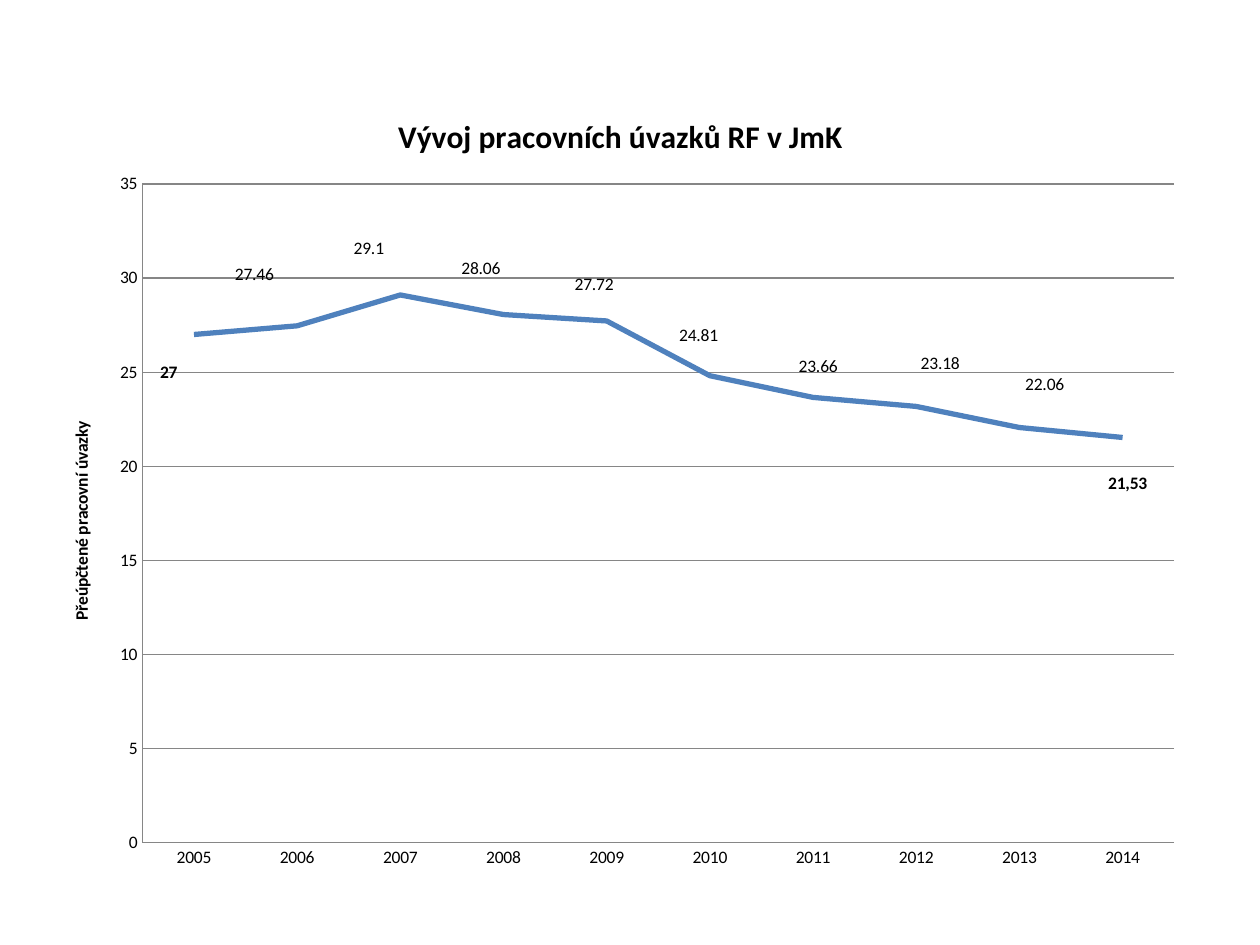
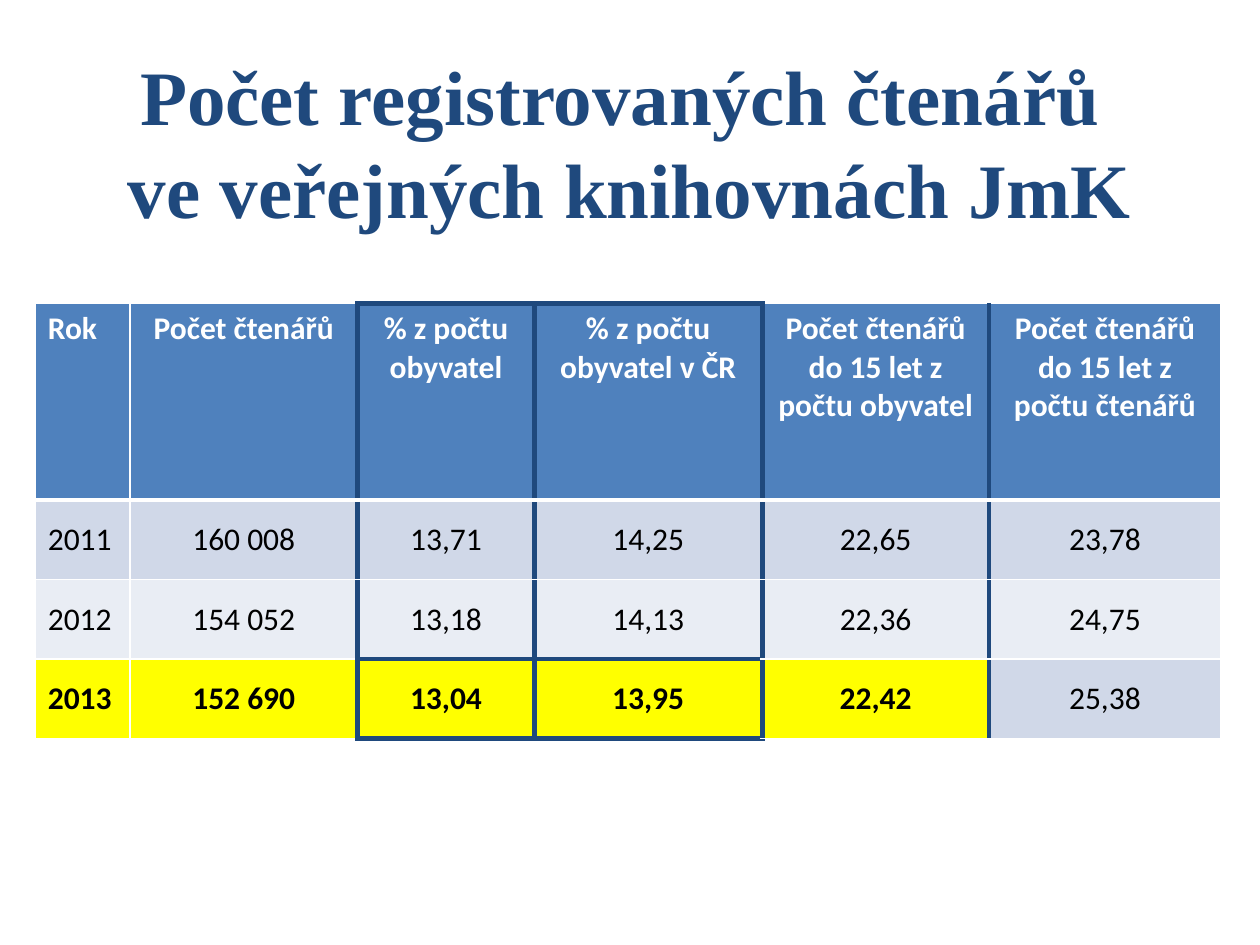
from lxml.etree import SubElement
from pptx import Presentation
from pptx.chart.data import CategoryChartData
from pptx.dml.color import RGBColor
from pptx.enum.chart import XL_CHART_TYPE, XL_LABEL_POSITION, XL_TICK_MARK
from pptx.enum.text import MSO_ANCHOR, PP_ALIGN
from pptx.oxml import parse_xml
from pptx.oxml.ns import nsdecls, qn
from pptx.util import Inches, Pt

COLORS = {
    "navy": "1F497D", "blue": "4F81BD", "band": "D0D8E8", "pale": "E9EDF4",
    "yellow": "FFFF00", "white": "FFFFFF", "black": "000000", "grid": "868686",
}
BODY_FONT, TITLE_FONT = "Calibri", "Times New Roman"

CHART_BOX = (0.35, 0.68, 9.15, 6.34)
PLOT_BOX = (0.78, 0.78, 8.19, 5.23)
WORKLOADS = [27, 27.46, 29.1, 28.06, 27.72, 24.81, 23.66, 23.18, 22.06, 21.53]
LABEL_SHIFTS = [
    (-0.2, 0.42), (-0.34, -0.29), (-0.25, -0.25), (-0.18, -0.25), (-0.1, -0.17),
    (-0.09, -0.2), (0.04, -0.13), (0.19, -0.22), (0.2, -0.22), (0.04, 0.48),
]

TITLE_BOX = (0.5, 0.3, 9, 1.64)
TABLE_BOX = (0.28, 2.41, 9.41, 3.46)
COLUMN_WIDTHS = [0.75, 1.81, 1.4, 1.81, 1.8, 1.84]
ROW_HEIGHTS = [1.56, 0.63, 0.63, 0.63]
READERS = [
    ["Rok", "Počet čtenářů", "% z počtu obyvatel", "% z počtu obyvatel v ČR",
     "Počet čtenářů do 15 let z počtu obyvatel",
     "Počet čtenářů do 15 let z počtu čtenářů"],
    ["2011", "160 008", "13,71", "14,25", "22,65", "23,78"],
    ["2012", "154 052", "13,18", "14,13", "22,36", "24,75"],
    ["2013", "152 690", "13,04", "13,95", "22,42", "25,38"],
]
ROW_FILLS = ["blue", "band", "pale", "yellow"]
FRAMED_COLUMNS = (2, 3)


def rgb(name):
    """Return the named colour."""
    return RGBColor.from_string(COLORS[name])


def style_font(font, size, color="black", bold=False, face=BODY_FONT):
    """Format one font."""
    font.name, font.size, font.bold = face, Pt(size), bold
    font.color.rgb = rgb(color)


def style_runs(text_frame, size, **look):
    """Format every run of a text frame."""
    for paragraph in text_frame.paragraphs:
        for run in paragraph.runs:
            style_font(run.font, size, **look)


def chart_layout(fractions, inner=False):
    """Build a manual chart layout from fractions of the chart."""
    layout = parse_xml(f"<c:layout {nsdecls('c')}><c:manualLayout/></c:layout>")
    settings = {"layoutTarget": "inner", "xMode": "edge", "yMode": "edge"} if inner else {}
    settings.update(zip("xywh", fractions))
    for tag, value in settings.items():
        SubElement(layout[0], qn(f"c:{tag}")).set("val", str(value))
    return layout


def place_plot(chart, box):
    """Fix the plot area inside the chart box."""
    plot_area = chart.plots[0]._element.getparent()
    for layout in plot_area.findall(qn("c:layout")):
        plot_area.remove(layout)
    width, height = box[2:]
    fractions = [part / whole for part, whole in zip(PLOT_BOX, (width, height) * 2)]
    plot_area.insert(0, chart_layout(fractions, inner=True))


def label_workloads(series, box):
    """Show the values, each moved off the line by its own shift."""
    labels = series.data_labels
    labels.show_value = True
    style_font(labels.font, 10)
    for leader in labels._element.findall(qn("c:showLeaderLines")):
        leader.set("val", "0")
    last = len(WORKLOADS) - 1
    for index, (right, down) in enumerate(LABEL_SHIFTS):
        label = series.points[index].data_label
        if index == last:
            label.text_frame.text = "21,53"
            style_runs(label.text_frame, 10, bold=True)
        else:
            style_font(label.font, 10, bold=index == 0)
        label.position = XL_LABEL_POSITION.ABOVE
        entry = labels._element.findall(qn("c:dLbl"))[index]
        entry.insert(1, chart_layout((right / box[2], down / box[3])))


def style_axes(chart):
    """Format both axes and the gridlines."""
    for axis in (chart.category_axis, chart.value_axis):
        axis.major_tick_mark = axis.minor_tick_mark = XL_TICK_MARK.NONE
        style_font(axis.tick_labels.font, 10)
        axis.format.line.color.rgb = rgb("grid")
        axis.format.line.width = Pt(0.75)
    values = chart.value_axis
    values.minimum_scale, values.maximum_scale, values.major_unit = 0, 35, 5
    gridline = values.major_gridlines.format.line
    gridline.color.rgb, gridline.width = rgb("grid"), Pt(0.75)
    values.axis_title.text_frame.text = "Přeúpčtené pracovní úvazky"
    style_runs(values.axis_title.text_frame, 10, bold=True)


def add_workload_chart(slide, box):
    """Draw the line chart of workloads in the box."""
    data = CategoryChartData()
    data.categories = [str(year) for year in range(2005, 2015)]
    data.add_series("Series 1", WORKLOADS)
    chart = slide.shapes.add_chart(XL_CHART_TYPE.LINE, *map(Inches, box), data).chart
    style_font(chart.font, 10)
    chart.has_legend = False
    chart.chart_title.text_frame.text = "Vývoj pracovních úvazků RF v JmK"
    style_runs(chart.chart_title.text_frame, 18, bold=True)
    style_axes(chart)
    place_plot(chart, box)
    chart.plots[0].vary_by_categories = False
    series = chart.plots[0].series[0]
    series.smooth = False
    series.format.line.color.rgb, series.format.line.width = rgb("blue"), Pt(3)
    label_workloads(series, box)


def add_title(slide, box, text):
    """Fill and place the title placeholder."""
    title = slide.shapes.title
    title.left, title.top, title.width, title.height = map(Inches, box)
    frame = title.text_frame
    frame.text = text
    frame.vertical_anchor = MSO_ANCHOR.MIDDLE
    frame.paragraphs[0].alignment = PP_ALIGN.CENTER
    style_runs(frame, 44, color="navy", bold=True, face=TITLE_FONT)


def column_edge(edge):
    """Return colour and width of a vertical table line."""
    return ("navy", 3) if 2 <= edge <= 5 else ("white", 1)


def row_edge(edge, column):
    """Return colour and width of a horizontal table line."""
    if edge == 1:
        return "white", 3
    framed = column in FRAMED_COLUMNS and edge in (0, 3, 4)
    return ("navy", 3) if framed else ("white", 1)


def set_borders(cell, row, column):
    """Draw the four lines around a cell."""
    edges = {
        "L": column_edge(column), "R": column_edge(column + 1),
        "T": row_edge(row, column), "B": row_edge(row + 1, column),
    }
    properties = cell._tc.get_or_add_tcPr()
    for position, (side, (color, width)) in enumerate(edges.items()):
        properties.insert(position, parse_xml(
            f'<a:ln{side} {nsdecls("a")} w="{Pt(width)}"><a:solidFill>'
            f'<a:srgbClr val="{COLORS[color]}"/></a:solidFill></a:ln{side}>'))


def fill_cell(cell, row, column):
    """Write and format one cell of the readers table."""
    header = row == 0
    plain_last = row == 3 and column == 5
    cell.text = READERS[row][column]
    cell.vertical_anchor = MSO_ANCHOR.TOP if header else MSO_ANCHOR.MIDDLE
    cell.text_frame.paragraphs[0].alignment = PP_ALIGN.CENTER if column else PP_ALIGN.LEFT
    style_runs(cell.text_frame, 18, color="white" if header else "black",
               bold=row in (0, 3) and not plain_last)
    cell.fill.solid()
    cell.fill.fore_color.rgb = rgb("band" if plain_last else ROW_FILLS[row])
    set_borders(cell, row, column)


def add_readers_table(slide, box):
    """Draw the table of registered readers in the box."""
    table = slide.shapes.add_table(
        len(ROW_HEIGHTS), len(COLUMN_WIDTHS), *map(Inches, box)).table
    table.horz_banding = False
    for column, width in zip(table.columns, COLUMN_WIDTHS):
        column.width = Inches(width)
    for row, height in zip(table.rows, ROW_HEIGHTS):
        row.height = Inches(height)
    for row in range(len(ROW_HEIGHTS)):
        for column in range(len(COLUMN_WIDTHS)):
            fill_cell(table.cell(row, column), row, column)


def main():
    """Build both slides and save them."""
    deck = Presentation()
    deck.slide_width, deck.slide_height = Inches(10), Inches(7.5)
    title_only, blank = deck.slide_layouts[5], deck.slide_layouts[6]
    add_workload_chart(deck.slides.add_slide(blank), CHART_BOX)
    readers = deck.slides.add_slide(title_only)
    add_title(readers, TITLE_BOX, "Počet registrovaných čtenářů \vve veřejných knihovnách JmK")
    add_readers_table(readers, TABLE_BOX)
    deck.save("out.pptx")


if __name__ == "__main__":
    main()
